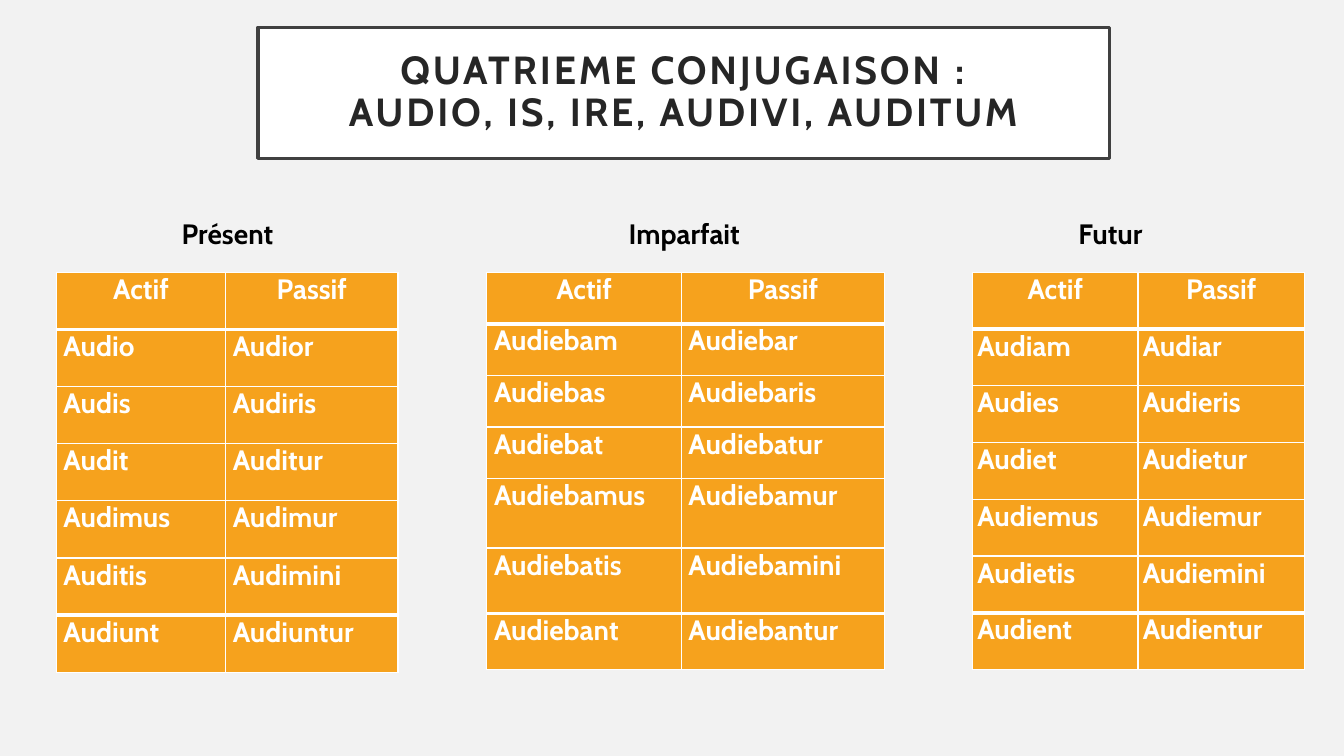
from lxml import etree
from pptx import Presentation
from pptx import util as u
from pptx.dml.color import RGBColor
from pptx.enum import text
from pptx.oxml.ns import qn

FONT = "Cabin"
WHITE, ORANGE, BLACK = "FFFFFF", "F6A21D", "000000"
TITLE = ["QUATRIEME CONJUGAISON\u00a0:", "AUDIO, IS, IRE, AUDIVI, AUDITUM"]
HEADER = ("Actif", "Passif")

# Lengths in cm
TENSES = [
    dict(name="Présent", label_left=3.4, left=1.42, cols=(4.27, 4.34),
         rows=[1.44] * 7, inset=0.18,
         forms=[("Audio", "Audior"), ("Audis", "Audiris"), ("Audit", "Auditur"),
                ("Audimus", "Audimur"), ("Auditis", "Audimini"),
                ("Audiunt", "Audiuntur")]),
    dict(name="Imparfait", label_left=14.91, left=12.27, cols=(4.9, 5.13),
         rows=[1.3] * 4 + [1.75, 1.65, 1.42], inset=0.18,
         forms=[("Audiebam", "Audiebar"), ("Audiebas", "Audiebaris"),
                ("Audiebat", "Audiebatur"), ("Audiebamus", "Audiebamur"),
                ("Audiebatis", "Audiebamini"), ("Audiebant", "Audiebantur")]),
    dict(name="Futur", label_left=25.65, left=24.51, cols=(4.17, 4.19),
         rows=[1.43] * 7, inset=0.12,
         forms=[("Audiam", "Audiar"), ("Audies", "Audieris"), ("Audiet", "Audietur"),
                ("Audiemus", "Audiemur"), ("Audietis", "Audiemini"),
                ("Audient", "Audientur")]),
]
LABEL_TOP, LABEL_W, LABEL_H = 5.33, 4.67, 1.12
TABLE_TOP = 6.86


def rgb(value):
    return RGBColor.from_string(value)


def paint(target, color):
    target.fill.solid()
    target.fill.fore_color.rgb = rgb(color)


def add_run(p, content, size, color):
    r = p.add_run()
    r.text = content
    r.font.name, r.font.size, r.font.bold = FONT, u.Pt(size), True
    r.font.color.rgb = rgb(color)
    return r


def set_borders(cell, top, bottom):
    """White cell borders; widths in points."""
    tc_pr = cell._tc.get_or_add_tcPr()
    sides = (("lnL", 1), ("lnR", 1), ("lnT", top), ("lnB", bottom))
    for i, (side, width) in enumerate(sides):
        ln = etree.Element(qn("a:" + side), w=str(u.Pt(width)))
        fill = etree.SubElement(ln, qn("a:solidFill"))
        etree.SubElement(fill, qn("a:srgbClr"), val=WHITE)
        tc_pr.insert(i, ln)


def add_label(s, tense):
    box = s.shapes.add_textbox(u.Cm(tense["label_left"]), u.Cm(LABEL_TOP),
                               u.Cm(LABEL_W), u.Cm(LABEL_H))
    tf = box.text_frame
    tf.word_wrap = True
    tf.vertical_anchor = text.MSO_ANCHOR.MIDDLE
    p = tf.paragraphs[0]
    p.alignment = text.PP_ALIGN.CENTER
    add_run(p, tense["name"], 20, BLACK)


def add_conjugation(s, tense):
    cols, rows = tense["cols"], tense["rows"]
    table = s.shapes.add_table(len(rows), len(cols), u.Cm(tense["left"]), u.Cm(TABLE_TOP),
                               u.Cm(sum(cols)), u.Cm(sum(rows))).table
    table.first_row = table.horz_banding = False
    for col, width in zip(table.columns, cols):
        col.width = u.Cm(width)
    for row, height in zip(table.rows, rows):
        row.height = u.Cm(height)

    last = len(rows) - 1
    for i, words in enumerate([HEADER] + tense["forms"]):
        for j, word in enumerate(words):
            cell = table.cell(i, j)
            paint(cell, ORANGE)
            # Thick rules below the header and above the last row
            set_borders(cell, top=3 if i in (1, last) else 1,
                        bottom=3 if i in (0, last - 1) else 1)
            cell.margin_left = cell.margin_right = u.Cm(tense["inset"] if i else 0.18)
            cell.margin_top = cell.margin_bottom = 0
            p = cell.text_frame.paragraphs[0]
            p.alignment = text.PP_ALIGN.LEFT if i else text.PP_ALIGN.CENTER
            add_run(p, word, 20, WHITE)


def add_title(s):
    title = s.shapes.title
    title.left, title.top = u.Cm(6.5), u.Cm(0.69)
    title.width, title.height = u.Cm(21.46), u.Cm(3.3)
    paint(title, WHITE)
    title.line.color.rgb = rgb("404040")
    title.line.width = u.Pt(2.5)
    tf = title.text_frame
    tf.word_wrap = True
    tf.auto_size = text.MSO_AUTO_SIZE.NONE
    tf.vertical_anchor = text.MSO_ANCHOR.MIDDLE
    tf.margin_left = tf.margin_right = tf.margin_top = tf.margin_bottom = u.Cm(0.5)
    p = tf.paragraphs[0]
    p.alignment = text.PP_ALIGN.CENTER
    p.line_spacing = 0.9
    for i, line in enumerate(TITLE):
        if i:
            p.add_line_break()
        r = add_run(p, line, 28, "262626")
        r.font._element.set("spc", "200")


def main():
    prs = Presentation()
    prs.slide_width, prs.slide_height = u.Cm(33.87), u.Cm(19.05)
    s = prs.slides.add_slide(prs.slide_layouts[5])
    paint(s.background, "F2F2F2")
    add_title(s)
    for tense in TENSES:
        add_label(s, tense)
        add_conjugation(s, tense)
    prs.save("out.pptx")


if __name__ == "__main__":
    main()
